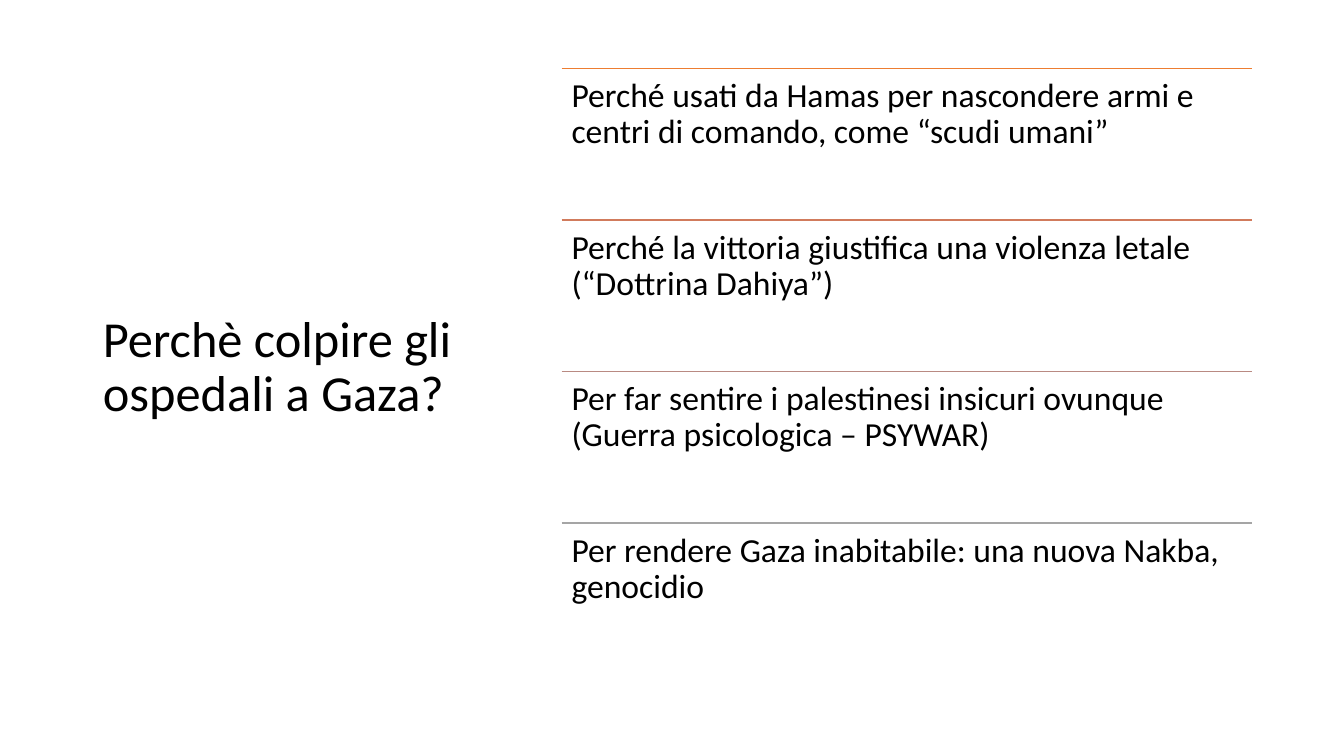
from dataclasses import dataclass

import pptx
import pptx.dml.color
import pptx.enum.shapes
import pptx.enum.text
import pptx.oxml
import pptx.oxml.ns
import pptx.shapes.base
import pptx.slide
import pptx.text.text
import pptx.util

Inches = pptx.util.Inches


@dataclass(frozen=True)
class Reason:
    text: str
    rule_color: str


REASONS = [
    Reason("Perché usati da Hamas per nascondere armi e centri di comando, come “scudi umani”", "ED7D31"),
    Reason("Perché la vittoria giustifica una violenza letale (“Dottrina Dahiya”)", "D17B5C"),
    Reason("Per far sentire i palestinesi insicuri ovunque (Guerra psicologica – PSYWAR)", "B98A82"),
    Reason("Per rendere Gaza inabitabile: una nuova Nakba, genocidio", "A5A5A5"),
]
REASONS_LEFT = 5.57
REASONS_WIDTH = 6.85
FIRST_TOP = 0.68
LAST_TOP = 5.19
REASON_HEIGHT = 1.5


def color(value: str) -> pptx.dml.color.RGBColor:
    return pptx.dml.color.RGBColor.from_string(value)


def write(
    frame: pptx.text.text.TextFrame,
    text: str,
    *,
    size: float,
    anchor: pptx.enum.text.MSO_ANCHOR,
    inset_x: float = 0.1,
    inset_y: float = 0.1,
    fill: str = "000000",
) -> None:
    frame.word_wrap = True
    frame.auto_size = pptx.enum.text.MSO_AUTO_SIZE.NONE
    frame.vertical_anchor = anchor
    frame.margin_left = frame.margin_right = Inches(inset_x)
    frame.margin_top = frame.margin_bottom = Inches(inset_y)
    paragraph = frame.paragraphs[0]
    paragraph.alignment = pptx.enum.text.PP_ALIGN.LEFT
    paragraph.line_spacing = 0.9
    run = paragraph.add_run()
    run.text = text
    run.font.name = "Calibri"
    run.font.size = pptx.util.Pt(size)
    run.font.color.rgb = color(fill)


def draw_reason(slide: pptx.slide.Slide, reason: Reason, top: float) -> None:
    rule = slide.shapes.add_connector(
        pptx.enum.shapes.MSO_CONNECTOR.STRAIGHT,
        Inches(REASONS_LEFT),
        Inches(top),
        Inches(REASONS_LEFT + REASONS_WIDTH),
        Inches(top),
    )
    rule.line.color.rgb = color(reason.rule_color)
    rule.line.width = pptx.util.Pt(1)
    properties = rule._element.spPr
    properties.append(pptx.oxml.parse_xml(f"<a:effectLst {pptx.oxml.ns.nsdecls('a')}/>"))
    statement = slide.shapes.add_textbox(
        Inches(REASONS_LEFT), Inches(top), Inches(REASONS_WIDTH), Inches(REASON_HEIGHT)
    )
    write(statement.text_frame, reason.text, size=24, anchor=pptx.enum.text.MSO_ANCHOR.TOP)


def main() -> None:
    deck = pptx.Presentation()
    deck.slide_width = Inches(13.33)
    deck.slide_height = Inches(7.5)
    slide = deck.slides.add_slide(deck.slide_layouts.get_by_name("Title Only"))

    question = slide.shapes.title
    question.left, question.top = Inches(0.92), Inches(0.61)
    question.width, question.height = Inches(3.69), Inches(6.09)
    write(
        question.text_frame,
        "Perchè colpire gli ospedali a Gaza?",
        size=36,
        anchor=pptx.enum.text.MSO_ANCHOR.MIDDLE,
        inset_y=0.05,
    )

    pitch = (LAST_TOP - FIRST_TOP) / (len(REASONS) - 1)
    for index, reason in enumerate(REASONS):
        draw_reason(slide, reason, FIRST_TOP + index * pitch)

    deck.save("out.pptx")


if __name__ == "__main__":
    main()
